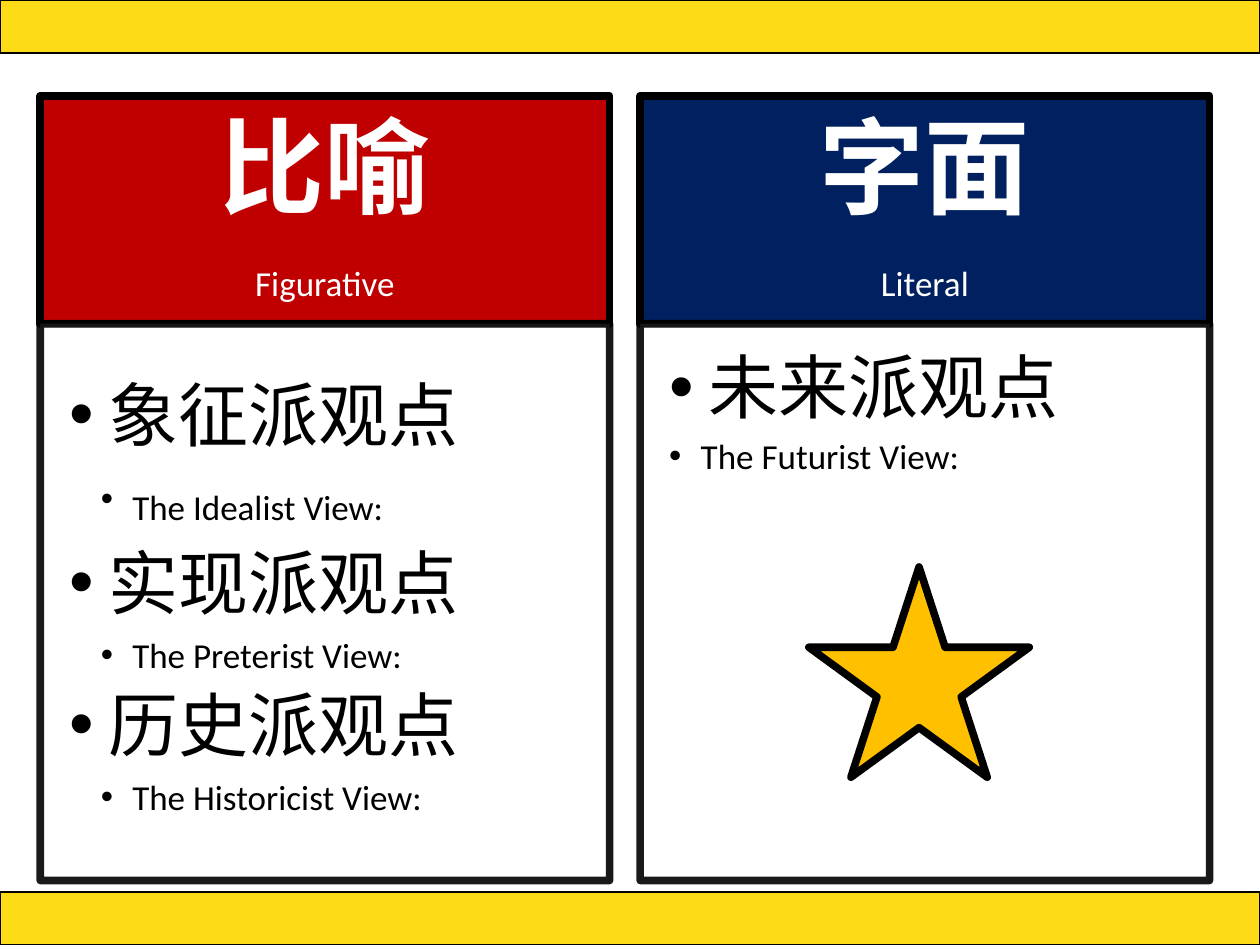
from lxml.etree import SubElement
from pptx import Presentation
from pptx.dml.color import RGBColor
from pptx.enum.shapes import MSO_SHAPE as Preset
from pptx.enum.text import MSO_ANCHOR as Anchor, PP_ALIGN as Align
from pptx.oxml.ns import qn
from pptx.util import Pt

YELLOW, RED, NAVY, GOLD = "FDDC17", "C00000", "002060", "FFC000"
BLACK, WHITE = "000000", "FFFFFF"
FONT = "Calibri"
SLIDE_WIDTH, SLIDE_HEIGHT, BAR_HEIGHT = 720, 540, 30.24
COLUMN_TOP, COLUMN_WIDTH, COLUMN_HEIGHT, HEADER_HEIGHT = 54.7, 325.4, 448.5, 130.3
COLUMN_LEFTS = (23, 365.8)
HEADER_INSETS = (33.8, 19.4, 33.8, 19.4)
BODY_INSETS = (16.6, 16.6, 22.3, 25.2)

FIGURATIVE_VIEWS = [
    ("象征派观点", "The Idealist View:", 31),
    ("实现派观点", "The Preterist View:", None),
    ("历史派观点", "The Historicist View:", None),
]
LITERAL_VIEWS = [("未来派观点", "The Futurist View:", None)]


def paint(color_format, color):
    """Give a fill or font colour its hex value."""
    color_format.rgb = RGBColor.from_string(color)


def add_panel(slide, preset, box, fill, line_width, alpha=None):
    """Add a filled, black-outlined shape with rounded line joins."""
    shape = slide.shapes.add_shape(preset, *(Pt(value) for value in box))
    shape.shadow.inherit = False
    shape.fill.solid()
    paint(shape.fill.fore_color, fill)
    paint(shape.line.color, BLACK)
    shape.line.width = Pt(line_width)
    line = shape.line._get_or_add_ln()
    SubElement(line, qn("a:round"))
    if alpha:
        for color in shape._element.spPr.iter(qn("a:srgbClr")):
            SubElement(color, qn("a:alpha"), val=str(alpha * 1000))
    return shape


def prepare_text(shape, insets, anchor):
    """Set wrapping, insets and anchor, and return the text frame."""
    frame = shape.text_frame
    frame.word_wrap = True
    frame.vertical_anchor = anchor
    (frame.margin_left, frame.margin_top,
     frame.margin_right, frame.margin_bottom) = (Pt(value) for value in insets)
    return frame


def next_paragraph(frame, align, space_percent, line_spacing):
    """Return a fresh paragraph with spacing after it in percent."""
    first = frame.paragraphs[0]
    paragraph = frame.add_paragraph() if first.runs else first
    paragraph.alignment = align
    if line_spacing:
        paragraph.line_spacing = line_spacing
    spacing = SubElement(paragraph._p.get_or_add_pPr(), qn("a:spcAft"))
    SubElement(spacing, qn("a:spcPct"), val=str(space_percent * 1000))
    return paragraph


def add_run(paragraph, text, size, color, bold=False, outline=None):
    """Add one run, with an optional thin outline colour."""
    run = paragraph.add_run()
    run.text = text
    run.font.name = FONT
    run.font.size = Pt(size)
    run.font.bold = bold
    paint(run.font.color, color)
    if outline:
        properties = run.font._element
        line = SubElement(properties, qn("a:ln"), w=str(Pt(0.75)))
        fill = SubElement(line, qn("a:solidFill"))
        SubElement(fill, qn("a:srgbClr"), val=outline)
        properties.insert(0, line)


def add_bullet(paragraph, margin, indent, level):
    """Give a paragraph a round bullet with a hanging indent."""
    paragraph.level = level
    properties = paragraph._p.get_or_add_pPr()
    properties.set("marL", str(Pt(margin)))
    properties.set("indent", str(Pt(-indent)))
    SubElement(properties, qn("a:buFont"), typeface="Arial")
    SubElement(properties, qn("a:buChar"), char="•")


def add_header(slide, box, color, chinese, english):
    """Add a column header with a large and a small line."""
    shape = add_panel(slide, Preset.RECTANGLE, box, color, 4.33)
    frame = prepare_text(shape, HEADER_INSETS, Anchor.MIDDLE)
    for text, size, bold in ((chinese, 60, True), (english, 20, False)):
        paragraph = next_paragraph(frame, Align.CENTER, 35, 0.9)
        add_run(paragraph, text, size, WHITE, bold)


def add_body(slide, box, views, anchor, line_spacing, sub_margin, sub_indent, sub_level):
    """Add a column body listing each view in Chinese and English."""
    shape = add_panel(slide, Preset.RECTANGLE, box, WHITE, 4.33, alpha=90)
    frame = prepare_text(shape, BODY_INSETS, anchor)
    for chinese, english, spacer_size in views:
        paragraph = next_paragraph(frame, Align.LEFT, 15, line_spacing)
        add_bullet(paragraph, 22.5, 22.5, 1)
        add_run(paragraph, chinese, 40, BLACK, outline=NAVY)
        paragraph = next_paragraph(frame, Align.LEFT, 15, line_spacing)
        add_bullet(paragraph, sub_margin, sub_indent, sub_level)
        add_run(paragraph, english, 20, BLACK)
        if spacer_size:
            add_run(paragraph, " ", spacer_size, BLACK)


def add_column(slide, box, color, heading, views, **body_style):
    """Add a header with its body directly below."""
    left, top, width, height = box
    add_header(slide, (left, top, width, HEADER_HEIGHT), color, *heading)
    body = (left, top + HEADER_HEIGHT, width, height - HEADER_HEIGHT)
    add_body(slide, body, views, **body_style)


def main():
    """Build the slide and save it."""
    presentation = Presentation()
    presentation.slide_width, presentation.slide_height = Pt(SLIDE_WIDTH), Pt(SLIDE_HEIGHT)
    slide = presentation.slides.add_slide(presentation.slide_layouts[6])
    for top in (SLIDE_HEIGHT - BAR_HEIGHT, 0):
        add_panel(slide, Preset.RECTANGLE, (0, top, SLIDE_WIDTH, BAR_HEIGHT), YELLOW, 0.75)
    left_box, right_box = ((left, COLUMN_TOP, COLUMN_WIDTH, COLUMN_HEIGHT)
                           for left in COLUMN_LEFTS)
    add_column(slide, left_box, RED, ("比喻", "Figurative"), FIGURATIVE_VIEWS,
               anchor=Anchor.MIDDLE, line_spacing=None,
               sub_margin=36, sub_indent=18, sub_level=2)
    add_column(slide, right_box, NAVY, ("字面", "Literal"), LITERAL_VIEWS,
               anchor=Anchor.TOP, line_spacing=0.9,
               sub_margin=18, sub_indent=18, sub_level=1)
    add_panel(slide, Preset.STAR_5_POINT, (462.2, 324, 126, 120.2), GOLD, 4.33)
    presentation.save("out.pptx")


if __name__ == "__main__":
    main()
